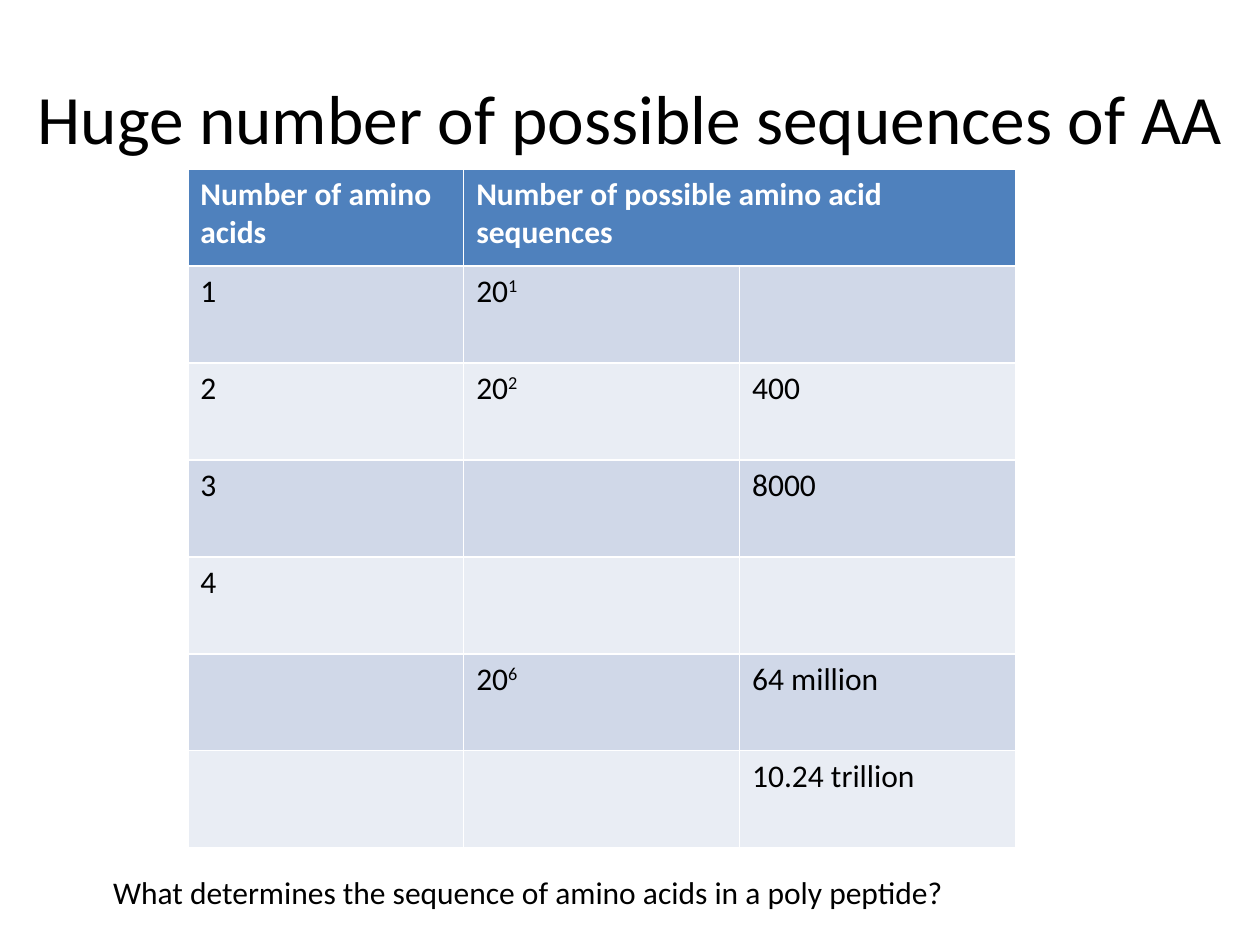
"""Build a slide on the number of possible amino acid sequences."""
from pptx import Presentation
from pptx.dml.color import RGBColor
from pptx.enum.text import MSO_ANCHOR, PP_ALIGN
from pptx.util import Inches, Pt

TITLE = "Huge number of possible sequences of AA"
QUESTION = "What determines the sequence of amino acids in a poly peptide?"
HEADER = ("Number of amino acids", "Number of possible amino acid sequences", "")
ROWS = [
    ("1", "20^1", ""),
    ("2", "20^2", "400"),
    ("3", "", "8000"),
    ("4", "", ""),
    ("", "20^6", "64 million"),
    ("", "", "10.24 trillion"),
]
BLACK, WHITE, BLUE = "000000", "FFFFFF", "4F81BD"
BANDS = ("D0D8E8", "E9EDF4")
COL_W, ROW_H = 2.19, 0.77


def rgb(value):
    return RGBColor.from_string(value)


def write(tf, text, size=18, color=BLACK, bold=False, align=PP_ALIGN.LEFT):
    p = tf.paragraphs[0]
    p.alignment = align
    base, _, power = text.partition("^")
    for part, raised in ((base, False), (power, True)):
        if part:
            r = p.add_run()
            r.text = part
            r.font.name = "Calibri"
            r.font.size = Pt(size)
            r.font.bold = bold
            r.font.color.rgb = rgb(color)
            if raised:
                r.font._element.set("baseline", "30000")


def add_table(s, left, top):
    rows = [HEADER, *ROWS]
    n_cols = len(HEADER)
    table = s.shapes.add_table(
        len(rows), n_cols, Inches(left), Inches(top),
        Inches(COL_W * n_cols), Inches(ROW_H * len(rows))).table
    for col in table.columns:
        col.width = Inches(COL_W)
    for i, values in enumerate(rows):
        table.rows[i].height = Inches(ROW_H)
        head = i == 0
        for j, text in enumerate(values):
            cell = table.cell(i, j)
            cell.fill.solid()
            cell.fill.fore_color.rgb = rgb(BLUE if head else BANDS[(i - 1) % 2])
            write(cell.text_frame, text, color=WHITE if head else BLACK, bold=head)
    table.cell(0, 1).merge(table.cell(0, 2))


def add_text(s, text, box, anchor=MSO_ANCHOR.TOP, **fmt):
    tf = s.shapes.add_textbox(*map(Inches, box)).text_frame
    tf.word_wrap = True
    tf.vertical_anchor = anchor
    write(tf, text, **fmt)


def main():
    prs = Presentation()
    prs.slide_width, prs.slide_height = Inches(10), Inches(7.5)
    s = prs.slides.add_slide(prs.slide_layouts[5])
    title = s.shapes.title
    title.left, title.top, title.width, title.height = map(Inches, (0, 0.3, 10, 1.25))
    title.text_frame.vertical_anchor = MSO_ANCHOR.MIDDLE
    write(title.text_frame, TITLE, size=39.6, align=PP_ALIGN.CENTER)
    add_table(s, 1.49, 1.34)
    add_text(s, QUESTION, (0.8, 6.88, 8.08, 0.4))
    prs.save("out.pptx")


if __name__ == "__main__":
    main()
